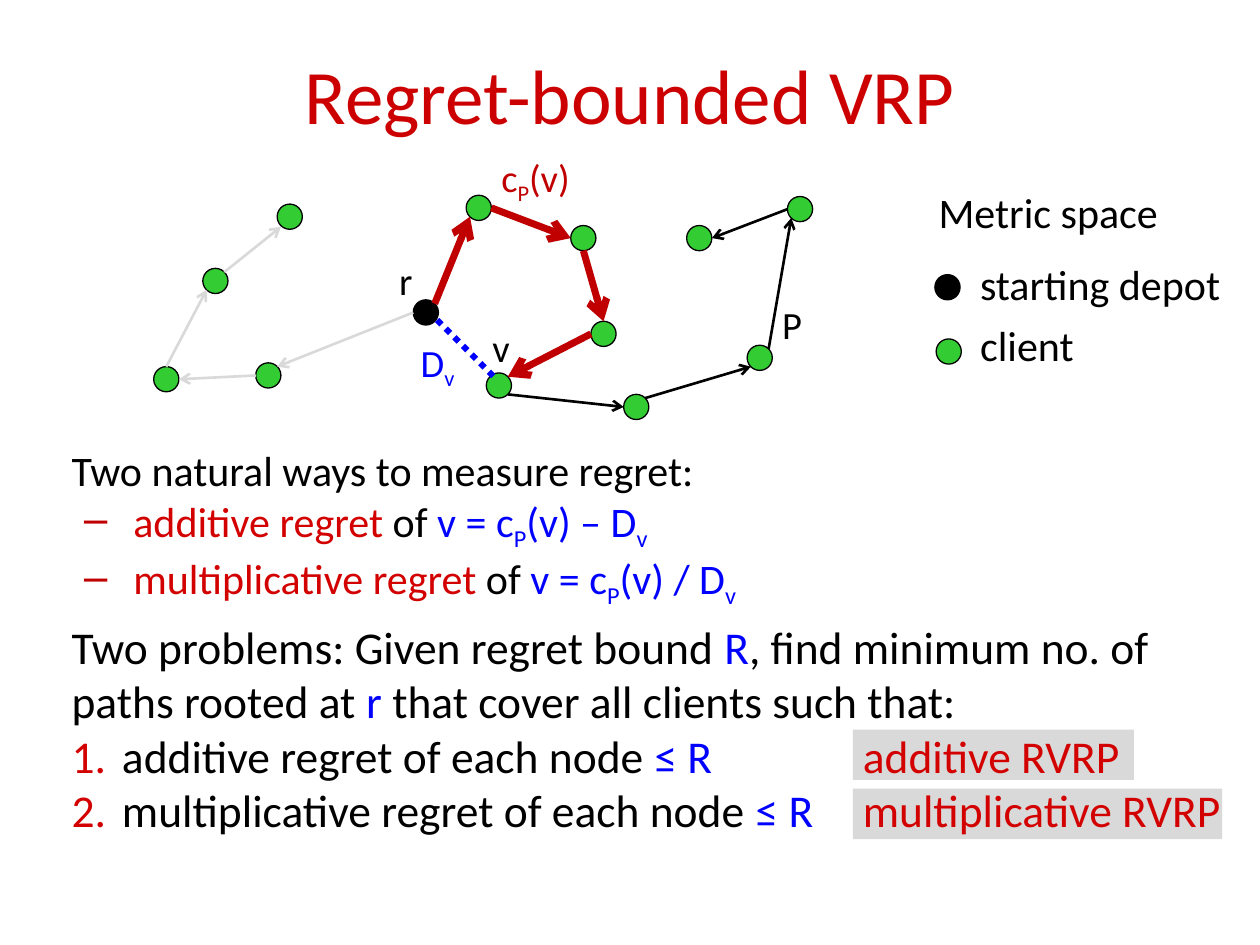
from lxml import etree
from pptx import Presentation
from pptx.dml.color import RGBColor
from pptx.enum.dml import MSO_LINE
from pptx.enum.shapes import MSO_CONNECTOR, MSO_SHAPE
from pptx.enum.text import MSO_ANCHOR, MSO_AUTO_SIZE, PP_ALIGN
from pptx.oxml.ns import qn
from pptx.util import Pt

PX = 9144
DOT = 20
LINE = MSO_CONNECTOR.STRAIGHT
OVAL, RECT = MSO_SHAPE.OVAL, MSO_SHAPE.RECTANGLE
CENTER, MIDDLE = PP_ALIGN.CENTER, MSO_ANCHOR.MIDDLE
GROW, DOTTED = MSO_AUTO_SIZE.SHAPE_TO_FIT_TEXT, MSO_LINE.ROUND_DOT
HEAD, TAIL = "a:headEnd", "a:tailEnd"

HEX = {
    "title": "CC0000", "red": "D30000", "path": "C00000", "blue": "0000FF",
    "black": "000000", "green": "33CC33", "gray": "D9D9D9",
}

DEPOT = (328, 238)
CLIENTS = [
    (203, 288), (161, 213), (220, 162), (122, 291), (370, 155),
    (453, 179), (469, 255), (386, 296), (495, 313), (593, 274),
    (625, 156), (545, 179),
]
ROUTES = [
    ("gray", 1.5, TAIL, [
        (328, 248, 220, 291), (203, 298, 142, 301),
        (132, 291, 164, 230), (178, 216, 223, 180)]),
    ("path", 4, TAIL, [
        (345, 241, 373, 172), (390, 165, 453, 189),
        (463, 199, 479, 255), (469, 265, 403, 299)]),
    ("black", 1.5, TAIL, [(403, 313, 495, 323)]),
    ("black", 1.5, HEAD, [
        (596, 291, 512, 316), (628, 173, 610, 277), (565, 189, 625, 166)]),
]
LABELS = [
    ((307, 199, 42, 47), 22, [("r", "black")]),
    ((381, 252, 42, 47), 22, [("v", "black")]),
    ((388, 117, 78, 47), 22, [("c", "path"), ("P", "path", True), ("(v)", "path")]),
    ((611, 234, 70, 47), 22, [("P", "black")]),
    ((324, 264, 131, 47), 22, [("D", "blue"), ("v", "blue", True)]),
    ((735, 143, 215, 52), 24, [("Metric space", "black")]),
    ((768, 200, 220, 50), 24, [("starting depot", "black")]),
    ((768, 249, 98, 50), 24, [("client", "black")]),
]
KEY = [((742, 218), "black"), ((743, 269), "green")]
TAGS = [(677, 579, 223, 40), (677, 626, 293, 40)]
WAYS = [("additive regret", "–"), ("multiplicative regret", "/")]
TASKS = [("additive", "≤ R \t"), ("multiplicative", "≤ R\t")]


def scale(*nums):
    return [n * PX for n in nums]


def rgb(name):
    return RGBColor.from_string(HEX[name])


def apply(obj, vals):
    for key, val in vals.items():
        setattr(obj, key, val)


def node(base, tag, **vals):
    return etree.SubElement(base, qn(tag), vals)


def shape(slide, kind, box, fill, edge=None):
    item = slide.shapes.add_shape(kind, *scale(*box))
    item.shadow.inherit = False
    item.fill.solid()
    item.fill.fore_color.rgb = rgb(fill)
    if edge:
        item.line.color.rgb = rgb(edge)
        item.line.width = Pt(0.75)
    else:
        item.line.fill.background()


def dot(slide, spot, fill):
    shape(slide, OVAL, (*spot, DOT, DOT), fill, "black")


def link(slide, ends, color, width, tip=None, dash=None):
    item = slide.shapes.add_connector(LINE, *scale(*ends))
    item.line.color.rgb = rgb(color)
    apply(item.line, {"width": Pt(width), "dash_style": dash})
    if tip:
        node(item.line._get_or_add_ln(), tip, type="arrow")
    node(item._element.spPr, "a:effectLst")


def write(para, runs, size):
    for text, color, *low in runs:
        run = para.add_run()
        run.text = text
        apply(run.font, {"name": "Calibri", "size": Pt(size)})
        run.font.color.rgb = rgb(color)
        if low:
            run.font._element.set("baseline", "-25000")


def mark(para, left, hang, color, tag, vals, tab=None):
    props = para._p.get_or_add_pPr()
    apply(props, {})
    props.set("marL", str(left * PX))
    props.set("indent", str(-hang * PX))
    node(node(props, "a:buClr"), "a:srgbClr", val=HEX[color])
    node(props, tag, **vals)
    if tab:
        node(node(props, "a:tabLst"), "a:tab", pos=str(tab * PX), algn="l")


def text(slide, box, size, lines):
    frame = slide.shapes.add_textbox(*scale(*box)).text_frame
    apply(frame, {"word_wrap": True, "auto_size": GROW})
    paras = [frame.paragraphs[0]] + [frame.add_paragraph() for _ in lines[1:]]
    for para, runs in zip(paras, lines):
        write(para, runs, size)
    return paras


def head(slide):
    item = slide.shapes.title
    apply(item, dict(zip(("left", "top", "width", "height"), scale(75, 28, 850, 92))))
    item.text_frame.vertical_anchor = MIDDLE
    para = item.text_frame.paragraphs[0]
    para.alignment = CENTER
    write(para, [("Regret-bounded VRP", "title")], 44)


def graph(slide):
    for spot in CLIENTS:
        dot(slide, spot, "green")
    dot(slide, DEPOT, "black")
    for color, width, tip, legs in ROUTES:
        for ends in legs:
            link(slide, ends, color, width, tip)
    link(slide, (347, 254, 392, 299), "blue", 3.5, dash=DOTTED)
    for spot, fill in KEY:
        dot(slide, spot, fill)
    for box, size, runs in LABELS:
        text(slide, box, size, [runs])


def ways(slide):
    lines = [[("Two natural ways to measure regret:", "black")]]
    for name, sign in WAYS:
        lines.append([
            (name, "red"), (" of ", "black"), ("v = c", "blue"),
            ("P", "blue", True), (f"(v) {sign} D", "blue"), ("v", "blue", True)])
    for para in text(slide, (47, 348, 931, 131), 24, lines)[1:]:
        mark(para, 49, 39, "path", "a:buChar", {"char": "–"})


def tasks(slide):
    lines = [[
        ("Two problems: Given regret bound ", "black"), ("R", "blue"),
        (", find minimum no. of paths rooted at ", "black"), ("r", "blue"),
        (" that cover all clients such that:", "black")]]
    for name, bound in TASKS:
        lines.append([
            (f"{name} regret of each node ", "black"), (bound, "blue"),
            (f"{name} RVRP", "red")])
    first, *rest = text(slide, (47, 486, 936, 185), 26, lines)
    first.space_before = Pt(12)
    for para in rest:
        mark(para, 40, 40, "red", "a:buAutoNum", {"type": "arabicPeriod"}, 628)


def main():
    deck = Presentation()
    deck.slide_width, deck.slide_height = scale(1000, 750)
    slide = deck.slides.add_slide(deck.slide_layouts[5])
    for box in TAGS:
        shape(slide, RECT, box, "gray")
    head(slide)
    graph(slide)
    ways(slide)
    tasks(slide)
    deck.save("out.pptx")


if __name__ == "__main__":
    main()
